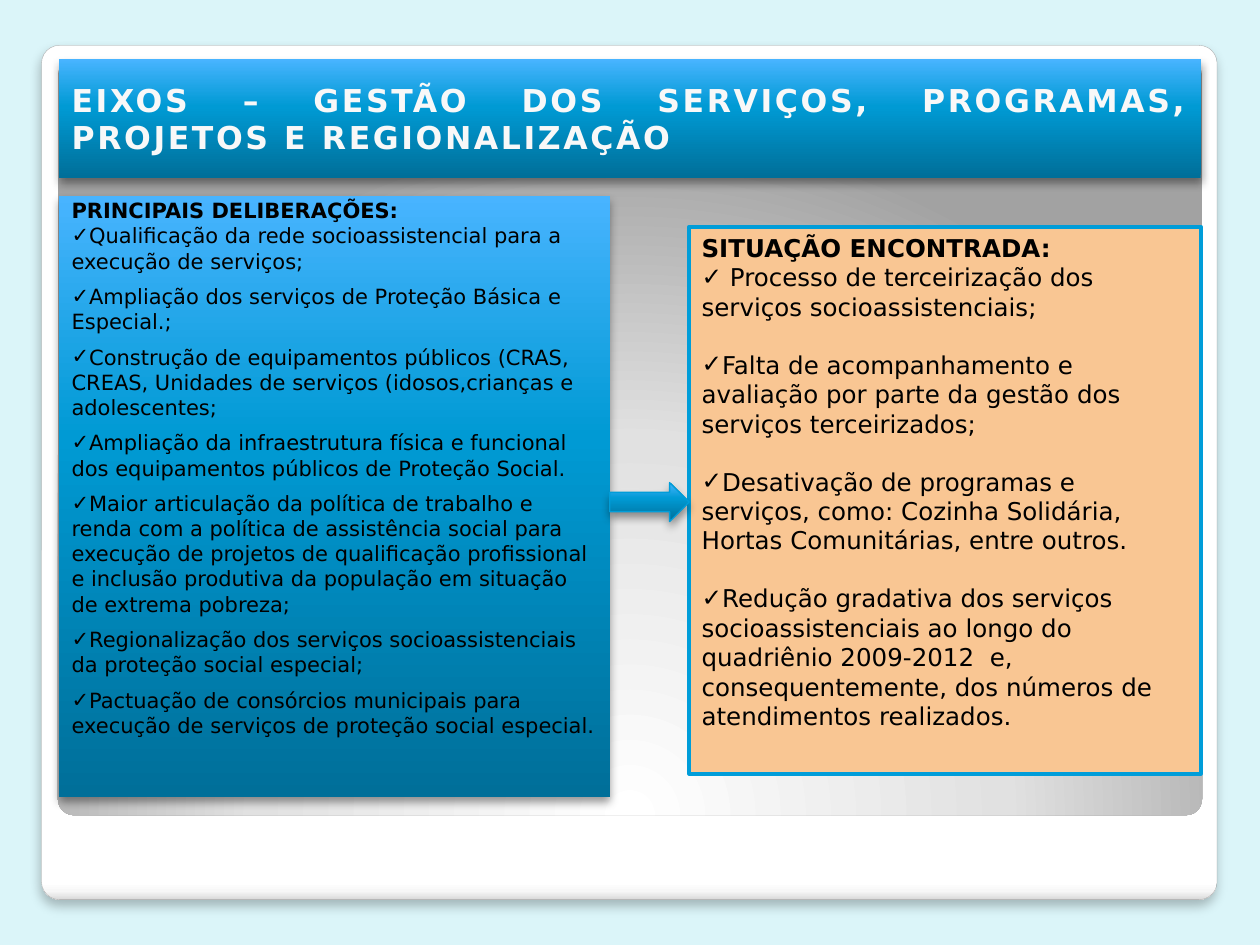
from pptx import Presentation
from pptx.dml.color import RGBColor
from pptx.enum.shapes import MSO_SHAPE
from pptx.enum.text import MSO_ANCHOR, PP_ALIGN
from pptx.oxml.ns import qn
from pptx.util import Inches, Pt
from lxml.etree import SubElement

FONT = "DejaVu Sans"
TITLE = "EIXOS – GESTÃO DOS SERVIÇOS, PROGRAMAS, PROJETOS E REGIONALIZAÇÃO"
DECISIONS = ("PRINCIPAIS DELIBERAÇÕES:", [
    "Qualificação da rede socioassistencial para a execução de serviços;",
    "Ampliação dos serviços de Proteção Básica e Especial.;",
    "Construção de equipamentos públicos (CRAS, CREAS, Unidades de serviços "
    "(idosos,crianças e adolescentes;",
    "Ampliação da infraestrutura física e funcional dos equipamentos públicos "
    "de Proteção Social.",
    "Maior articulação da política de trabalho e renda com a política de "
    "assistência social para execução de projetos de qualificação profissional "
    "e inclusão produtiva da população em situação de extrema pobreza;",
    "Regionalização dos serviços socioassistenciais da proteção social especial;",
    "Pactuação de consórcios municipais para execução de serviços de proteção "
    "social especial.",
])
FINDINGS = ("SITUAÇÃO ENCONTRADA:", [
    " Processo de terceirização dos serviços socioassistenciais;",
    "Falta de acompanhamento e avaliação por parte da gestão dos serviços "
    "terceirizados;",
    "Desativação de programas e serviços, como: Cozinha Solidária, Hortas "
    "Comunitárias, entre outros.",
    "Redução gradativa dos serviços socioassistenciais ao longo do quadriênio "
    "2009-2012  e, consequentemente, dos números de atendimentos realizados.",
])

BLUE = [(0, "006F99"), (60, "009AD4"), (100, "48B4FF")]
FRAME = [(0, "FFFFFF"), (98, "FFFFFF"), (99, "F7F7F7"), (100, "DADADA")]
GLOW = [(0, "FFFFFF"), (55, "E1E1E1"), (100, "A2A2A2")]
BLUE_SHADOW = ("000000", 40, 5.2, 3)
FRAME_SHADOW = ("000000", 25, 6, 4)

LEFT, RIGHT = 0.47, 9.53
COLUMN_END, COLUMN_START = 4.84, 5.47


def color(value):
    return RGBColor.from_string(value)


def set_gradient(sp, stops, angle):
    """Linear gradient at an angle, or radial from below when angle is None."""
    sp.fill.gradient()
    grad = sp._element.spPr.find(qn("a:gradFill"))
    for child in list(grad):
        grad.remove(child)
    stop_list = SubElement(grad, qn("a:gsLst"))
    for position, value in stops:
        stop = SubElement(stop_list, qn("a:gs"), pos=str(position * 1000))
        SubElement(stop, qn("a:srgbClr"), val=value)
    if angle is None:
        radial = SubElement(grad, qn("a:path"), path="circle")
        SubElement(radial, qn("a:fillToRect"), l="50000", t="175000",
                   r="50000", b="-75000")
    else:
        SubElement(grad, qn("a:lin"), ang=str(angle * 60000), scaled="0")


def set_shadow(sp, value, alpha, blur, distance):
    effects = sp._element.spPr.find(qn("a:effectLst"))
    outer = SubElement(effects, qn("a:outerShdw"), blurRad=str(Pt(blur)),
                       dist=str(Pt(distance)), dir="5400000", rotWithShape="0")
    clr = SubElement(outer, qn("a:srgbClr"), val=value)
    SubElement(clr, qn("a:alpha"), val=str(alpha * 1000))


def add_box(kind, x, y, w, h, fill, angle=270, line=None, shadow=None):
    """Fill is a hex string or a list of gradient stops; line is (hex, points)."""
    sp = s.shapes.add_shape(kind, *map(Inches, (x, y, w, h)))
    if kind == MSO_SHAPE.ROUNDED_RECTANGLE:
        sp.adjustments[0] = 0.021
    if isinstance(fill, str):
        sp.fill.solid()
        sp.fill.fore_color.rgb = color(fill)
    else:
        set_gradient(sp, fill, angle)
    if line:
        sp.line.color.rgb, sp.line.width = color(line[0]), Pt(line[1])
    else:
        sp.line.fill.background()
    sp.shadow.inherit = False
    if shadow:
        set_shadow(sp, *shadow)
    return sp


def write(p, text, size, value="000000", bold=False, align=PP_ALIGN.LEFT,
          spacing=None, bullet=None, after=0):
    p.alignment, p.space_after = align, Pt(after)
    if bullet:
        pPr = p._p.get_or_add_pPr()
        pPr.set("marL", "0")
        pPr.set("indent", "0")
        SubElement(pPr, qn("a:buFont"), typeface=FONT)
        SubElement(pPr, qn("a:buChar"), char=bullet)
    r = p.add_run()
    r.text = text
    r.font.name, r.font.size, r.font.bold = FONT, Pt(size), bold
    r.font.color.rgb = color(value)
    if spacing:
        r._r.get_or_add_rPr().set("spc", str(int(spacing * 100)))


def text_frame(sp, anchor=MSO_ANCHOR.TOP, top=0.05):
    tf = sp.text_frame
    tf.word_wrap, tf.vertical_anchor, tf.margin_top = True, anchor, Inches(top)
    return tf


def write_list(tf, content, size, gap):
    heading, items = content
    write(tf.paragraphs[0], heading, size, bold=True)
    for item in items:
        write(tf.add_paragraph(), item, size, bullet="✓", after=gap)


prs = Presentation()
prs.slide_width, prs.slide_height = Inches(10), Inches(7.5)
s = prs.slides.add_slide(prs.slide_layouts[6])
s.background.fill.solid()
s.background.fill.fore_color.rgb = color("DBF5F9")

add_box(MSO_SHAPE.ROUNDED_RECTANGLE, 0.33, 0.36, 9.33, 6.78, FRAME, angle=90,
        line=("A4A4A4", 0.16), shadow=FRAME_SHADOW)
add_box(MSO_SHAPE.ROUNDED_RECTANGLE, 0.46, 0.47, 9.08, 6, GLOW, angle=None)

title = add_box(MSO_SHAPE.RECTANGLE, LEFT, 0.47, RIGHT - LEFT, 0.94, BLUE,
                shadow=BLUE_SHADOW)
write(text_frame(title, MSO_ANCHOR.MIDDLE).paragraphs[0], TITLE, 18, "F8F8F8",
      bold=True, align=PP_ALIGN.JUSTIFY, spacing=1.5)

findings = add_box(MSO_SHAPE.RECTANGLE, COLUMN_START, 1.8, RIGHT - COLUMN_START,
                   4.34, "F9C693", line=("009DD9", 2.25))
write_list(text_frame(findings), FINDINGS, 14, gap=16.3)

decisions = add_box(MSO_SHAPE.RECTANGLE, LEFT, 1.56, COLUMN_END - LEFT, 4.77, BLUE,
                    shadow=BLUE_SHADOW)
write_list(text_frame(decisions, top=0.01), DECISIONS, 12, gap=5.8)

add_box(MSO_SHAPE.RIGHT_ARROW, COLUMN_END, 3.83, COLUMN_START - COLUMN_END, 0.31,
        BLUE, line=("009DD9", 0.75), shadow=BLUE_SHADOW)

prs.save("out.pptx")
